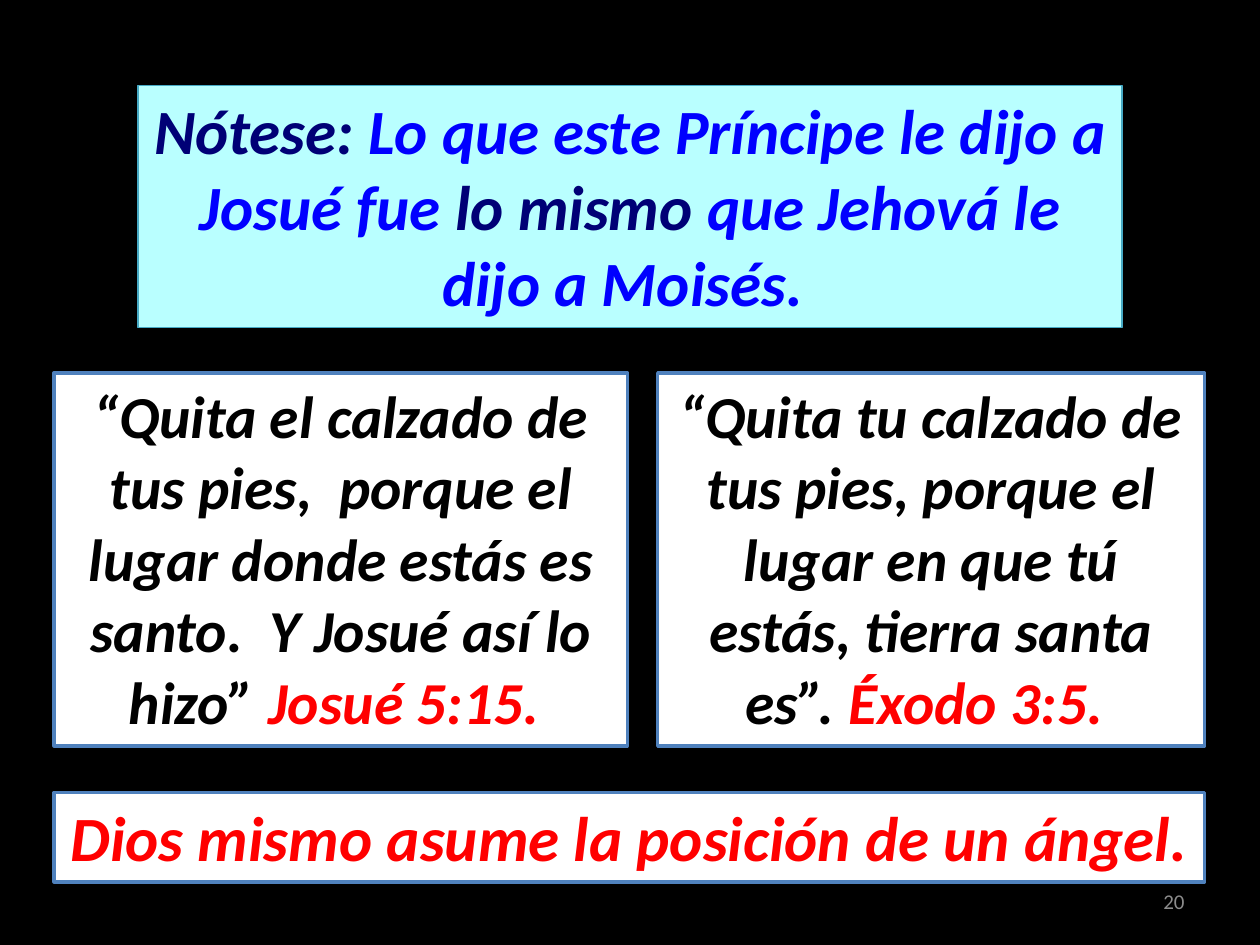
from lxml import etree
from pptx import Presentation
from pptx.dml.color import RGBColor
from pptx.enum.shapes import MSO_SHAPE
from pptx.enum.text import MSO_ANCHOR as Anchor, MSO_AUTO_SIZE as AutoSize, PP_ALIGN as Align
from pptx.oxml.ns import qn
from pptx.util import Emu, Inches, Pt

BLACK = RGBColor(0x00, 0x00, 0x00)
WHITE = RGBColor(0xFF, 0xFF, 0xFF)
RED = RGBColor(0xFF, 0x00, 0x00)
BLUE = RGBColor(0x00, 0x00, 0xFF)
NAVY = RGBColor(0x00, 0x00, 0x76)
GRAY = RGBColor(0x8C, 0x8C, 0x8C)
CYAN = RGBColor(0xB9, 0xFF, 0xFF)
TEAL = RGBColor(0x46, 0xAA, 0xC5)
STEEL = RGBColor(0x4F, 0x81, 0xBD)

WIDTH, HEIGHT = 10, 7.5
LEFT, RIGHT = 0.43, 9.56
GAP = 0.24
QUOTE_TOP, QUOTE_HEIGHT = 2.96, 2.96
JOSHUA_WIDTH = 4.55


def add_child(parent, tag, **attributes):
    """Append a DrawingML element and return it."""
    return etree.SubElement(parent, qn(tag), {key: str(value) for key, value in attributes.items()})


def outline_run(run, color):
    """Give the letters of a run a thin line in their own colour."""
    properties = run.font._element
    line = add_child(properties, "a:ln", w=Pt(0.75))
    add_child(add_child(line, "a:solidFill"), "a:srgbClr", val=color)
    properties.insert(0, line)


def write(shape, *runs, size, align=Align.CENTER, anchor=Anchor.TOP, emphasis=True):
    """Write (text, colour) runs as one formatted paragraph."""
    frame = shape.text_frame
    frame.word_wrap = True
    frame.vertical_anchor = anchor
    frame.auto_size = AutoSize.SHAPE_TO_FIT_TEXT if emphasis else AutoSize.NONE
    paragraph = frame.paragraphs[0]
    paragraph.alignment = align
    for text, color in runs:
        run = paragraph.add_run()
        run.text = text
        run.font.name = "Calibri"
        run.font.size = Pt(size)
        run.font.bold = run.font.italic = emphasis
        if emphasis:
            outline_run(run, color)
        run.font.color.rgb = color


def paint(shape, fill, line, line_width):
    """Set a shape's fill and line and remove its shadow."""
    shape.fill.solid()
    shape.fill.fore_color.rgb = fill
    shape.line.color.rgb = line
    shape.line.width = Pt(line_width)
    shape.shadow.inherit = False


def cast_shadow(shape):
    """Add a soft shadow straight below the shape."""
    effects = shape._element.spPr.find(qn("a:effectLst"))
    shadow = add_child(effects, "a:outerShdw", blurRad=Pt(3.1), dist=Pt(1.6),
                       dir=90 * 60000, rotWithShape=0)
    add_child(add_child(shadow, "a:srgbClr", val=BLACK), "a:alpha", val=38000)


def add_heading(slide, *runs):
    """Turn the title placeholder into the centred heading box."""
    title = slide.shapes.title
    width = 7.81
    title.left, title.top = Inches((WIDTH - width) / 2), Inches(0.68)
    title.width, title.height = Inches(width), Inches(1.92)
    paint(title, CYAN, TEAL, 0.75)
    cast_shadow(title)
    write(title, *runs, size=36)


def add_box(slide, left, top, width, height, *runs, size):
    """Add a white box with a steel border."""
    box = slide.shapes.add_shape(MSO_SHAPE.RECTANGLE, *map(Inches, (left, top, width, height)))
    paint(box, WHITE, STEEL, 2)
    write(box, *runs, size=size)


def add_page_number(slide, number):
    """Add the page number at the lower right."""
    box = slide.shapes.add_textbox(*map(Inches, (7.17, 6.95, 2.33, 0.4)))
    write(box, (number, GRAY), size=12, align=Align.RIGHT, anchor=Anchor.MIDDLE, emphasis=False)


def main():
    """Build the slide and save it."""
    presentation = Presentation()
    presentation.slide_width, presentation.slide_height = Inches(WIDTH), Inches(HEIGHT)
    slide = presentation.slides.add_slide(presentation.slide_layouts[5])
    slide.background.fill.solid()
    slide.background.fill.fore_color.rgb = BLACK

    add_page_number(slide, "20")
    add_heading(slide, ("Nótese: ", NAVY), ("Lo que este Príncipe le dijo a Josué fue ", BLUE),
                ("lo mismo ", NAVY), ("que Jehová le dijo a Moisés. ", BLUE))

    exodus_left = LEFT + JOSHUA_WIDTH + GAP
    quotes = [
        (LEFT, JOSHUA_WIDTH, "“Quita el calzado de tus pies,  porque el lugar donde estás es "
         "santo.  Y Josué así lo hizo” ", "Josué 5:15. "),
        (exodus_left, RIGHT - exodus_left, "“Quita tu calzado de tus pies, porque el lugar "
         "en que tú estás, tierra santa es”. ", "Éxodo 3:5. "),
    ]
    for left, width, quote, verse in quotes:
        add_box(slide, left, QUOTE_TOP, width, QUOTE_HEIGHT, (quote, BLACK), (verse, RED), size=34)
    add_box(slide, LEFT, 6.29, RIGHT - LEFT, 0.71,
            ("Dios mismo asume la posición de un ángel.", RED), size=36)

    presentation.save("out.pptx")


if __name__ == "__main__":
    main()
